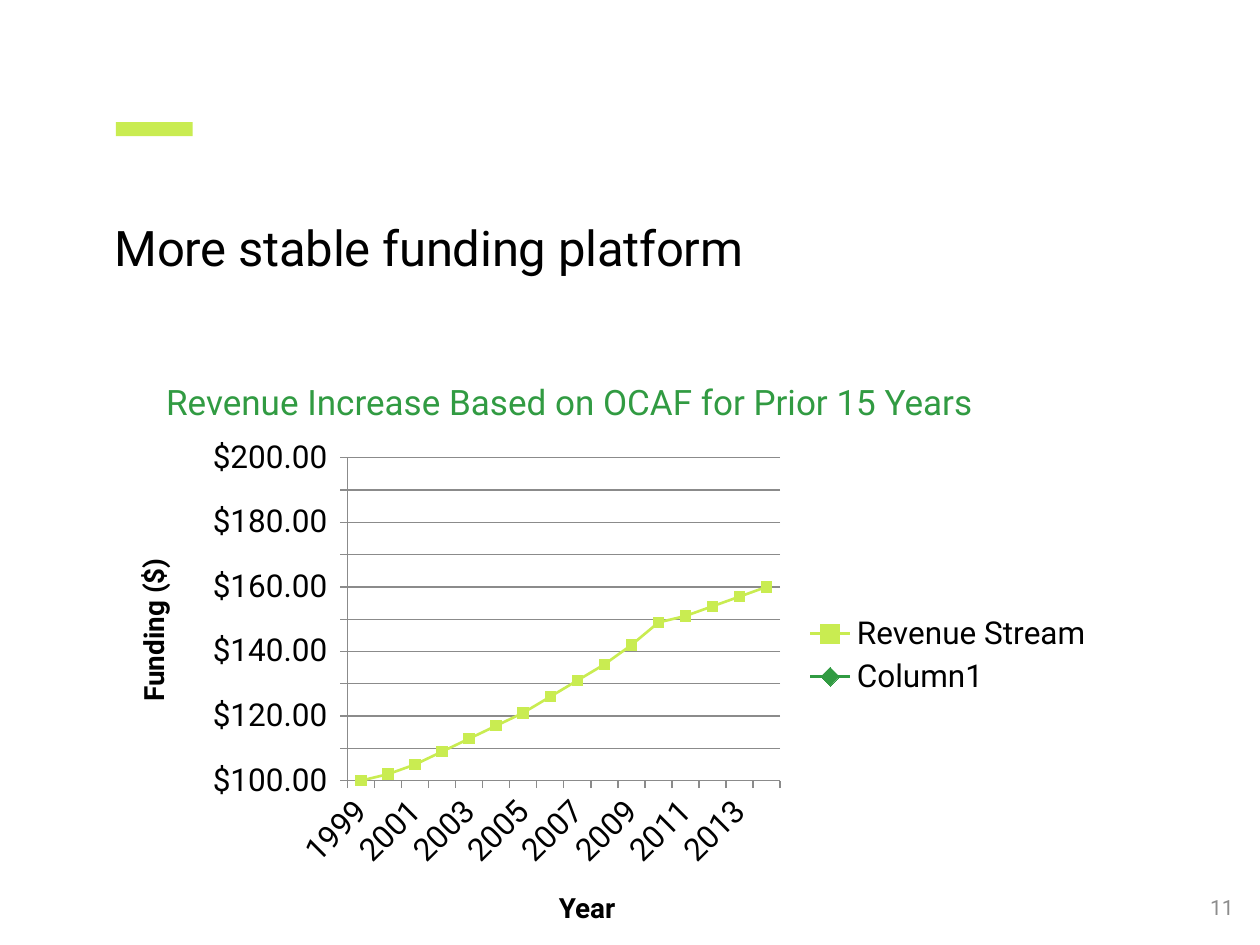
from lxml import etree
from pptx import Presentation
from pptx.chart.data import CategoryChartData
from pptx.dml.color import RGBColor
from pptx.enum.chart import XL_CHART_TYPE as ChartType, XL_LEGEND_POSITION as LegendPos
from pptx.enum.chart import XL_MARKER_STYLE as Marker, XL_TICK_MARK as Tick
from pptx.enum.shapes import MSO_SHAPE as Shape
from pptx.enum.text import MSO_ANCHOR as Anchor, PP_ALIGN as Align
from pptx.oxml.ns import qn
from pptx.util import Inches, Pt

COLORS = {"lime": "C9EC51", "green": "319B42", "text": "000000",
          "number": "8C8C8C", "grid": "8B8B8B"}
FONT = "Roboto"
TITLE = "More stable funding platform"
YEARS = [str(year) for year in range(1999, 2015)]
SERIES = [
    ("Revenue Stream", [100, 102, 105, 109, 113, 117, 121, 126,
                        131, 136, 142, 149, 151, 154, 157, 160], "lime", Marker.SQUARE),
    ("Column1", [0] * len(YEARS), "green", Marker.DIAMOND),
]
# text, box, size, colour, bold, alignment, rotation
LABELS = [
    ("Revenue Increase Based on OCAF for Prior 15 Years",
     (1.22, 2.75, 8.17, 0.87), 20, "green", False, Align.LEFT, 0),
    ("Year", (2.71, 7.01, 3.9, 0.39), 15.9, "text", True, Align.CENTER, 0),
    ("Funding ($)", (-0.32, 4.81, 3.07, 0.38), 15.9, "text", True, Align.CENTER, 270),
    ("11", (7.64, 7, 2.25, 0.4), 12, "number", False, Align.RIGHT, 0),
]
CHART_BOX = (1.49, 3.42, 7.29, 3.56)
PLOT_SHARES = {"x": 0.174, "y": 0.06, "w": 0.471, "h": 0.72}


def rgb(key):
    return RGBColor.from_string(COLORS[key])


def inches(box):
    return [Inches(length) for length in box]


def style_font(font, size, color, bold=False):
    font.name, font.size, font.bold = FONT, Pt(size), bold
    font.color.rgb = rgb(color)


def add_label(slide, text, box, size, color, bold, align, rotation):
    label = slide.shapes.add_textbox(*inches(box))
    label.rotation = rotation
    frame = label.text_frame
    frame.word_wrap = True
    frame.vertical_anchor = Anchor.MIDDLE
    frame.text = text
    frame.paragraphs[0].alignment = align
    style_font(frame.paragraphs[0].runs[0].font, size, color, bold)


def fix_plot_area(chart):
    """Pin the inner plot area to its shares of the chart frame."""
    plot_area = chart._chartSpace.chart.plotArea
    layout = plot_area.find(qn("c:layout"))
    if layout is None:
        layout = etree.Element(qn("c:layout"))
        plot_area.insert(0, layout)
    manual = etree.SubElement(layout, qn("c:manualLayout"))
    settings = {"layoutTarget": "inner", "xMode": "edge", "yMode": "edge", **PLOT_SHARES}
    for tag, value in settings.items():
        etree.SubElement(manual, qn(f"c:{tag}")).set("val", str(value))


def add_revenue_chart(slide):
    data = CategoryChartData()
    data.categories = YEARS
    for name, values, _, _ in SERIES:
        data.add_series(name, values)
    chart = slide.shapes.add_chart(ChartType.LINE_MARKERS, *inches(CHART_BOX), data).chart
    style_font(chart.font, 18, "text")
    chart.has_title = False
    chart.has_legend = True
    chart.legend.position = LegendPos.RIGHT
    chart.legend.include_in_layout = False
    fix_plot_area(chart)

    years, funding = chart.category_axis, chart.value_axis
    for axis in (years, funding):
        axis.major_tick_mark, axis.minor_tick_mark = Tick.OUTSIDE, Tick.NONE
        axis.format.line.color.rgb = rgb("grid")
        axis.format.line.width = Pt(0.75)
        style_font(axis.tick_labels.font, 18, "text")
    years._element.find(qn("c:txPr")).find(qn("a:bodyPr")).set("rot", "-2700000")
    funding.minimum_scale, funding.maximum_scale, funding.major_unit = 100, 200, 10
    funding.has_major_gridlines = True
    funding.major_gridlines.format.line.color.rgb = rgb("grid")
    funding.major_gridlines.format.line.width = Pt(0.75)
    funding.tick_labels.number_format = '_("$"* #,##0.00_)'
    funding.tick_labels.number_format_is_linked = False

    for line, (_, _, color, marker) in zip(chart.plots[0].series, SERIES):
        line.smooth = False
        line.format.line.color.rgb = rgb(color)
        line.format.line.width = Pt(1.5)
        line.marker.style, line.marker.size = marker, 6
        line.marker.format.fill.solid()
        line.marker.format.fill.fore_color.rgb = rgb(color)
        line.marker.format.line.color.rgb = rgb(color)


def main():
    deck = Presentation()
    deck.slide_width, deck.slide_height = Inches(10), Inches(7.5)
    slide = deck.slides.add_slide(deck.slide_layouts[5])

    accent = slide.shapes.add_shape(Shape.RECTANGLE, *inches((0.92, 0.97, 0.61, 0.11)))
    accent.shadow.inherit = False
    accent.fill.solid()
    accent.fill.fore_color.rgb = rgb("lime")
    accent.line.fill.background()

    title = slide.shapes.title
    title.left, title.top, title.width, title.height = inches((0.91, 1.73, 5.38, 1.05))
    frame = title.text_frame
    frame.margin_left = frame.margin_right = frame.margin_top = frame.margin_bottom = 0
    frame.vertical_anchor = Anchor.TOP
    frame.text = TITLE
    frame.paragraphs[0].alignment = Align.LEFT
    heading = frame.paragraphs[0].runs[0]
    style_font(heading.font, 28, "text")
    heading._r.get_or_add_rPr().set("spc", "-10")

    add_revenue_chart(slide)
    for label in LABELS:
        add_label(slide, *label)
    deck.save("out.pptx")


if __name__ == "__main__":
    main()
